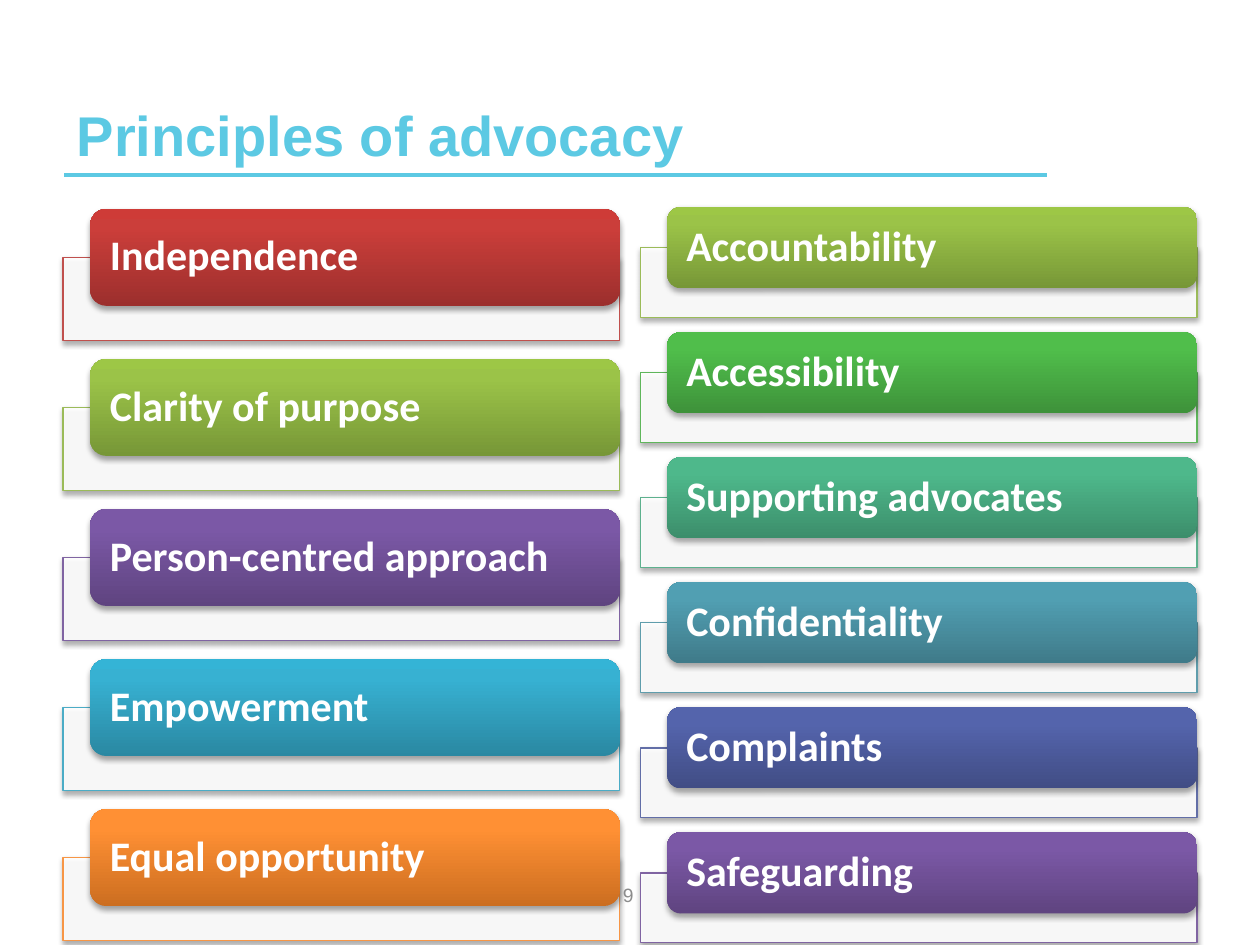
from copy import deepcopy

from lxml.etree import SubElement
from pptx import Presentation
from pptx.dml.color import RGBColor
from pptx.enum.shapes import MSO_CONNECTOR, MSO_SHAPE
from pptx.enum.text import MSO_ANCHOR as Anchor, MSO_AUTO_SIZE as AutoSize, PP_ALIGN as Align
from pptx.oxml.ns import qn
from pptx.util import Pt

ACCENT = "5CC9E3"

# Outline, then gradient from bottom to top
RED = ("C0504D", "9C2F2D", "CB3E3A", "CE3B37")
LIME = ("9BBB59", "779737", "9BC348", "9DC746")
PURPLE = ("8064A2", "5F4480", "7B58A6", "7C57A8")
AQUA = ("4BACC6", "2A88A2", "37B1D2", "34B4D6")
ORANGE = ("F79646", "CC6E20", "FF9034", "FF9136")
GREEN = ("5FB65B", "3E923A", "50BE4B", "4FC149")
JADE = ("5DB18E", "3C8E6B", "4EB88B", "4CBB8C")
TEAL = ("5F9DAC", "3F7A89", "519FB2", "50A0B5")
INDIGO = ("626EA7", "414D85", "5464AC", "5363AF")

LEFT_ITEMS = [
    ("Independence", RED),
    ("Clarity of purpose", LIME),
    ("Person-centred approach", PURPLE),
    ("Empowerment", AQUA),
    ("Equal opportunity", ORANGE),
]
RIGHT_ITEMS = [
    ("Accountability", LIME),
    ("Accessibility", GREEN),
    ("Supporting advocates", JADE),
    ("Confidentiality", TEAL),
    ("Complaints", INDIGO),
    ("Safeguarding", PURPLE),
]


def rgb(value):
    return RGBColor.from_string(value)


def set_font(p, name, size, color, bold=False):
    p.font.name, p.font.size, p.font.bold = name, Pt(size), bold
    p.font.color.rgb = rgb(color)


def add_shadow(sp):
    sp.shadow.inherit = False
    effects = sp._element.spPr.find(qn("a:effectLst"))
    shadow = SubElement(effects, qn("a:outerShdw"), blurRad=str(Pt(3.1)),
                        dist=str(Pt(1.8)), dir="5400000", rotWithShape="0")
    color = SubElement(shadow, qn("a:srgbClr"), val="000000")
    SubElement(color, qn("a:alpha"), val="35000")


def set_gradient(sp, colors):
    fill = sp.fill
    fill.gradient()
    fill.gradient_angle = 90
    stops = sp._element.spPr.find(".//" + qn("a:gsLst"))
    stops.append(deepcopy(stops[-1]))
    for stop, position, color in zip(fill.gradient_stops, (0, 0.8, 1), colors):
        stop.position = position
        stop.color.rgb = rgb(color)


def add_panel(slide, left, top, width, height, outline):
    sp = slide.shapes.add_shape(MSO_SHAPE.RECTANGLE, Pt(left), Pt(top), Pt(width), Pt(height))
    sp.fill.solid()
    sp.fill.fore_color.rgb = rgb("FFFFFF")
    color = sp._element.spPr.find(qn("a:solidFill"))[0]
    SubElement(color, qn("a:alpha"), val="90000")
    sp.line.color.rgb = rgb(outline)
    sp.line.width = Pt(0.75)
    add_shadow(sp)


def add_label(slide, left, top, width, height, text, colors):
    sp = slide.shapes.add_shape(MSO_SHAPE.ROUNDED_RECTANGLE,
                                Pt(left), Pt(top), Pt(width), Pt(height))
    set_gradient(sp, colors)
    sp.line.fill.background()
    add_shadow(sp)
    tf = sp.text_frame
    tf.word_wrap = True
    tf.vertical_anchor = Anchor.MIDDLE
    tf.margin_left = tf.margin_right = Pt(8.6)
    tf.margin_top = tf.margin_bottom = 0
    p = tf.paragraphs[0]
    p.text = text
    p.alignment = Align.LEFT
    p.line_spacing = 0.9
    set_font(p, "Calibri", 24, "FFFFFF", True)


def add_column(slide, items, left, top, pitch, label_height, panel_height):
    """Stack panels; each label starts above its panel and overlaps it."""
    width, indent = 318.2, 15.5
    for i, (text, (outline, *gradient)) in enumerate(items):
        y = top + i * pitch
        add_panel(slide, left, y + label_height / 2, width, panel_height, outline)
        add_label(slide, left + indent, y, width - indent, label_height, text, gradient)


def add_title(slide, text):
    title = slide.shapes.title
    title.left, title.top, title.width, title.height = Pt(36.7), Pt(20.9), Pt(561.6), Pt(78.5)
    tf = title.text_frame
    tf.auto_size = AutoSize.NONE
    tf.vertical_anchor = Anchor.BOTTOM
    p = tf.paragraphs[0]
    p.text = text
    p.alignment = Align.LEFT
    set_font(p, "Arial", 32, ACCENT, True)


def add_rule(slide):
    line = slide.shapes.add_connector(MSO_CONNECTOR.STRAIGHT, Pt(36.7), Pt(100), Pt(598.3), Pt(100))
    line.line.color.rgb = rgb(ACCENT)
    line.line.width = Pt(2)
    SubElement(line._element.spPr, qn("a:effectLst"))


def add_page_number(slide, number):
    tf = slide.shapes.add_textbox(Pt(275), Pt(496.8), Pt(168), Pt(28.8)).text_frame
    tf.word_wrap = True
    tf.vertical_anchor = Anchor.MIDDLE
    p = tf.paragraphs[0]
    p.text = number
    p.alignment = Align.CENTER
    set_font(p, "Arial", 11, "8C8C8C")


def main():
    prs = Presentation()
    prs.slide_width, prs.slide_height = Pt(720), Pt(540)
    slide = prs.slides.add_slide(prs.slide_layouts[5])

    # Heading
    add_title(slide, "Principles of advocacy")
    add_rule(slide)

    # Two columns of principles
    add_column(slide, LEFT_ITEMS, 36, 119.4, 85.75, 55.4, 47.3)
    add_column(slide, RIGHT_ITEMS, 365.8, 118.3, 71.45, 46.5, 39.7)

    # Footer
    add_page_number(slide, "9")
    prs.save("out.pptx")


if __name__ == "__main__":
    main()
